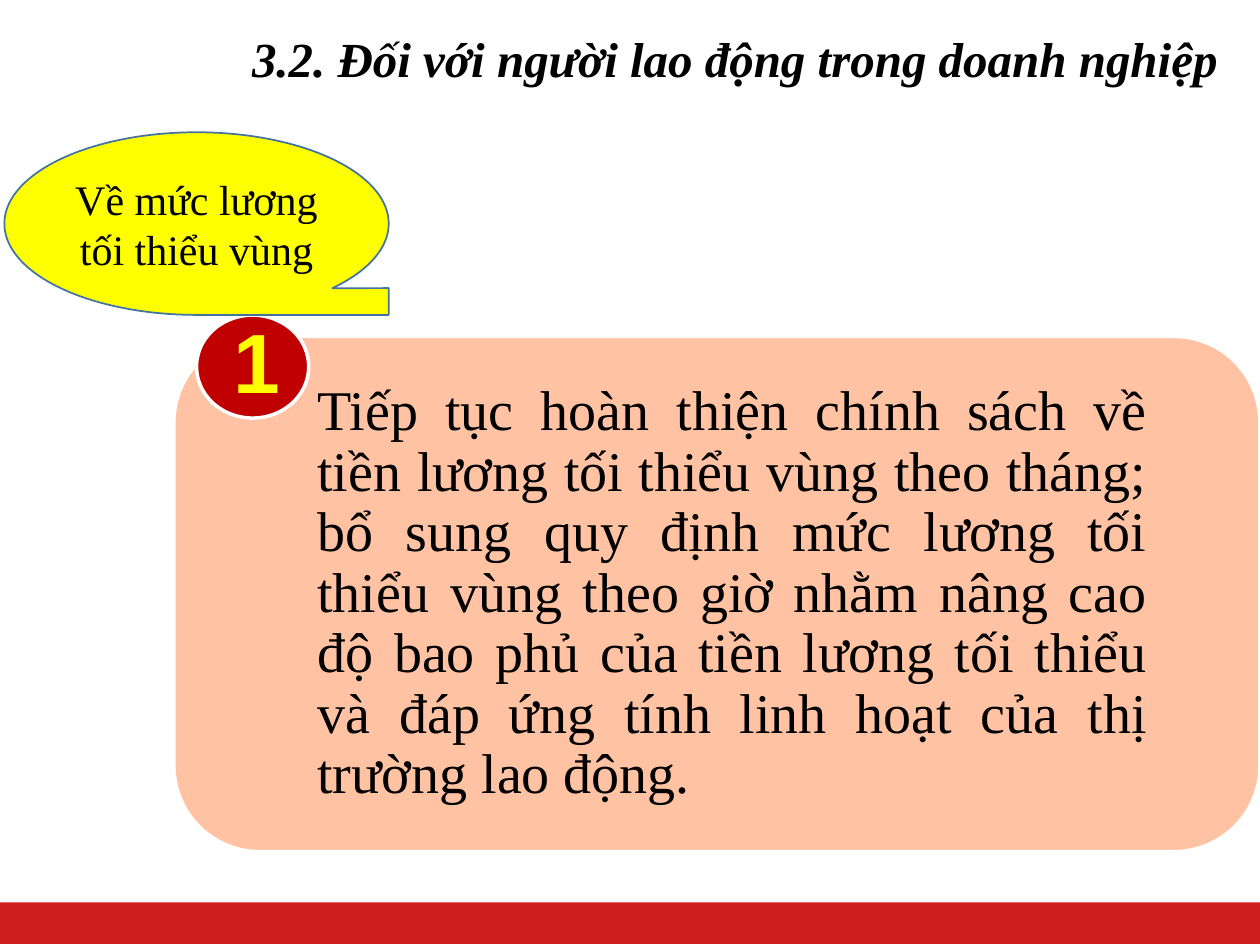
from dataclasses import dataclass

from lxml import etree
from pptx import Presentation
from pptx import util as u
from pptx.dml.color import RGBColor
from pptx.enum import shapes, text
from pptx.oxml import ns


@dataclass(frozen=True)
class Theme:
    serif: str = "Times New Roman"
    sans: str = "Arial"
    black: str = "000000"
    white: str = "FFFFFF"
    yellow: str = "FFFF00"
    peach: str = "FFC2A3"
    crimson: str = "C00000"
    red: str = "CD1D1D"
    steel: str = "43739E"
    label_size: int = 24
    title_size: int = 28
    body_size: int = 32
    number_size: int = 48


@dataclass(frozen=True)
class Area:
    """Percentages of the slide's width and height."""
    left: float
    top: float
    width: float
    height: float


THEME = Theme()
WIDTH, HEIGHT = u.Inches(10), u.Inches(7.5)
TITLE = Area(13.8, 0, 86.2, 13.07)
POLICY = Area(13.8, 35.6, 86.2, 54.53)
NUMBER = Area(15.6, 33.35, 8.9, 10.9)
TOPIC = Area(0.35, 14, 30.5, 19.33)
FOOTER = Area(0, 95.5, 100, 4.4)


def place(shape, area: Area) -> None:
    shape.left, shape.width = (int(WIDTH * share / 100) for share in (area.left, area.width))
    shape.top, shape.height = (int(HEIGHT * share / 100) for share in (area.top, area.height))


def paint(shape, fill: str, outline: str | None = None, weight: float = 1) -> None:
    shape.fill.solid()
    shape.fill.fore_color.rgb = RGBColor.from_string(fill)
    if outline:
        shape.line.color.rgb = RGBColor.from_string(outline)
        shape.line.width = u.Pt(weight)
    else:
        shape.line.fill.background()


def draw(slide, kind, area: Area, fill: str, outline: str | None = None, weight: float = 1):
    shape = slide.shapes.add_shape(kind, 0, 0, 0, 0)
    place(shape, area)
    paint(shape, fill, outline, weight)
    shape.shadow.inherit = False
    return shape


def write(shape, wording: str, *, size: int, font: str = THEME.serif, color: str = THEME.black,
          bold: bool = False, italic: bool = False, align=text.PP_ALIGN.CENTER,
          insets: tuple = (0.1, 0.05, 0.1, 0.05), margin: float = 0, indent: float = 0,
          spacing: float = 1, after: float = 0, wrap: bool = True) -> None:
    frame = shape.text_frame
    frame.word_wrap = wrap
    frame.auto_size = text.MSO_AUTO_SIZE.NONE
    frame.vertical_anchor = text.MSO_ANCHOR.MIDDLE
    frame.margin_left, frame.margin_top, frame.margin_right, frame.margin_bottom = map(u.Inches, insets)
    paragraph = frame.paragraphs[0]
    paragraph.text = wording
    paragraph.alignment = align
    paragraph.line_spacing = spacing
    paragraph.space_before, paragraph.space_after = u.Pt(0), u.Pt(after)
    properties = paragraph._p.get_or_add_pPr()
    properties.set("marL", str(u.Inches(margin)))
    properties.set("indent", str(u.Inches(indent)))
    etree.SubElement(properties, ns.qn("a:buNone"))
    style = paragraph.runs[0].font
    style.name, style.size, style.bold, style.italic = font, u.Pt(size), bold, italic
    style.color.rgb = RGBColor.from_string(color)


def round_corners(placeholder) -> None:
    geometry = etree.SubElement(placeholder._element.spPr, ns.qn("a:prstGeom"), prst="roundRect")
    etree.SubElement(geometry, ns.qn("a:avLst"))


def main() -> None:
    deck = Presentation()
    deck.slide_width, deck.slide_height = WIDTH, HEIGHT
    slide = deck.slides.add_slide(deck.slide_layouts[1])
    heading, policy = slide.placeholders

    draw(slide, shapes.MSO_SHAPE.RECTANGLE, FOOTER, THEME.red)

    place(heading, TITLE)
    write(heading, "3.2. Đối với người lao động trong doanh nghiệp", size=THEME.title_size,
          bold=True, italic=True, align=text.PP_ALIGN.JUSTIFY, indent=0.52, spacing=0.9, after=6)

    place(policy, POLICY)
    round_corners(policy)
    paint(policy, THEME.peach, THEME.white, 2)
    write(policy, "Tiếp tục hoàn thiện chính sách về tiền lương tối thiểu vùng theo tháng; "
          "bổ sung quy định mức lương tối thiểu vùng theo giờ nhằm nâng cao độ bao phủ của "
          "tiền lương tối thiểu và đáp ứng tính linh hoạt của thị trường lao động.",
          size=THEME.body_size, align=text.PP_ALIGN.JUSTIFY, insets=(0.69, 0.7, 0.69, 0.7),
          margin=0.25, spacing=0.9, after=6)

    number = draw(slide, shapes.MSO_SHAPE.OVAL, NUMBER, THEME.crimson, THEME.white, 2)
    write(number, "1", size=THEME.number_size, font=THEME.sans, color=THEME.yellow, bold=True,
          insets=(0.07, 0, 0, 0), spacing=0.9, wrap=False)

    topic = draw(slide, shapes.MSO_SHAPE.FLOWCHART_SEQUENTIAL_ACCESS_STORAGE, TOPIC,
                 THEME.yellow, THEME.steel)
    write(topic, "Về mức lương tối thiểu vùng", size=THEME.label_size)

    deck.save("out.pptx")


if __name__ == "__main__":
    main()
